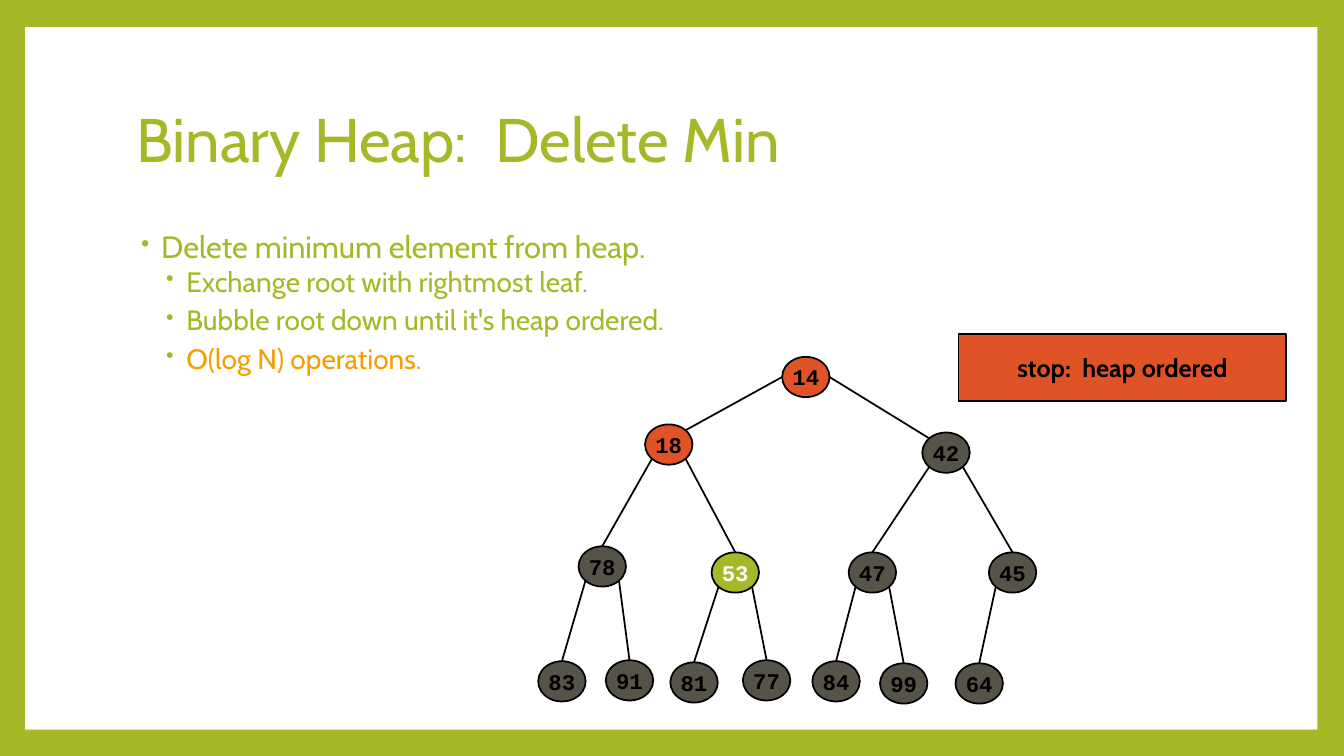
import math

import pptx
import pptx.dml.color
import pptx.enum.shapes
import pptx.enum.text
import pptx.oxml
import pptx.oxml.ns
import pptx.util

SLIDE_WIDTH = pptx.util.Inches(13.333)
SLIDE_HEIGHT = pptx.util.Inches(7.5)

GREEN, ORANGE, AMBER = "A6B727", "DF5327", "F59E00"
GREY, BLACK, WHITE = "565349", "000000", "FFFFFF"
SANS, MONO = "Cabin", "Courier New"

# All positions are percentages of the slide's width and height.
NODE_WIDTH, NODE_HEIGHT = 3.53, 5.33

# Heap in array order: the children of entry i are entries 2i + 1 and 2i + 2.
# Each entry is key, centre x, centre y.
HEAP = [
    (14, 59.96, 49.87),
    (18, 49.76, 58.8), (42, 70.39, 59.87),
    (78, 44.81, 74.93), (53, 54.71, 75.73),
    (47, 64.91, 75.73), (45, 75.34, 75.73),
    (83, 41.81, 90.13), (91, 46.84, 90), (81, 51.64, 90.27), (77, 57.04, 90),
    (84, 62.21, 90.13), (99, 67.24, 90.4), (64, 72.86, 90.4),
]
NODE_COLOURS = {14: (ORANGE, BLACK), 18: (ORANGE, BLACK), 53: (GREEN, WHITE)}

STEPS = [
    ("Delete minimum element from heap.", 0, GREEN),
    ("Exchange root with rightmost leaf.", 1, GREEN),
    ("Bubble root down until it's heap ordered.", 1, GREEN),
    ("O(log N) operations.", 1, AMBER),
]


def colour(hex_code):
    return pptx.dml.color.RGBColor.from_string(hex_code)


def across(percent):
    return round(SLIDE_WIDTH * percent / 100)


def down(percent):
    return round(SLIDE_HEIGHT * percent / 100)


def box(left, top, width, height):
    return across(left), down(top), across(width), down(height)


def format_runs(paragraph, font, size, hex_code, bold=False):
    for run in paragraph.runs:
        run.font.name = font
        run.font.size = pptx.util.Pt(size)
        run.font.bold = bold
        run.font.color.rgb = colour(hex_code)


def add_filled(slide, kind, area, fill, outline=None):
    shape = slide.shapes.add_shape(kind, *box(*area))
    shape.shadow.inherit = False
    shape.fill.solid()
    shape.fill.fore_color.rgb = colour(fill)
    if outline:
        shape.line.color.rgb = colour(outline)
        shape.line.width = pptx.util.Pt(1.25)
    else:
        shape.line.fill.background()
    return shape


def add_label(shape, text, font, size, hex_code):
    frame = shape.text_frame
    frame.text = text
    frame.word_wrap = False
    frame.vertical_anchor = pptx.enum.text.MSO_ANCHOR.MIDDLE
    frame.paragraphs[0].alignment = pptx.enum.text.PP_ALIGN.CENTER
    format_runs(frame.paragraphs[0], font, size, hex_code, bold=True)


def add_frame(slide):
    """Colour the slide's border and put the white panel behind the title."""
    slide.background.fill.solid()
    slide.background.fill.fore_color.rgb = colour(GREEN)
    panel = add_filled(slide, pptx.enum.shapes.MSO_SHAPE.RECTANGLE,
                       (1.88, 3.6, 96.15, 92.93), WHITE)
    slide.shapes.title.element.addprevious(panel.element)


def set_title(slide, text):
    title = slide.shapes.title
    title.left, title.top, title.width, title.height = box(9.38, 8.93, 81, 19.73)
    frame = title.text_frame
    frame.text = text
    frame.auto_size = pptx.enum.text.MSO_AUTO_SIZE.NONE
    frame.vertical_anchor = pptx.enum.text.MSO_ANCHOR.MIDDLE
    heading = frame.paragraphs[0]
    heading.alignment = pptx.enum.text.PP_ALIGN.LEFT
    heading.line_spacing = 0.9
    format_runs(heading, SANS, 44, GREEN)


def add_bullet(paragraph, level):
    properties = paragraph._p.get_or_add_pPr()
    properties.set("marL", str(pptx.util.Inches(0.25 * (level + 1))))
    properties.set("indent", str(pptx.util.Inches(-0.2)))
    namespace = pptx.oxml.ns.nsdecls("a")
    for bullet_part in (
        f'<a:buClr {namespace}><a:srgbClr val="{GREEN}"/></a:buClr>',
        f'<a:buSzPct {namespace} val="80000"/>',
        f'<a:buChar {namespace} char="•"/>',
    ):
        properties.append(pptx.oxml.parse_xml(bullet_part))


def add_steps(slide):
    frame = slide.shapes.add_textbox(*box(9.38, 30, 81, 58.93)).text_frame
    frame.word_wrap = True
    for index, (text, level, hex_code) in enumerate(STEPS):
        step = frame.add_paragraph() if index else frame.paragraphs[0]
        step.text = text
        step.level = level
        step.line_spacing = 0.9
        step.space_before = pptx.util.Pt(2 if level else 14)
        step.space_after = pptx.util.Pt(4 if level else 0)
        add_bullet(step, level)
        format_runs(step, SANS, 20 if level else 22, hex_code)


def rim_point(node, degrees):
    """Point on a node's outline, clockwise from the right."""
    _, x, y = node
    angle = math.radians(degrees)
    return (across(x + NODE_WIDTH / 2 * math.cos(angle)),
            down(y + NODE_HEIGHT / 2 * math.sin(angle)))


def add_edge(slide, parent_index, child_index):
    is_left = child_index % 2 == 1
    if parent_index == 0:
        leave, arrive = (180, -45) if is_left else (0, -135)
    else:
        leave, arrive = (135 if is_left else 45), -90
    edge = slide.shapes.add_connector(
        pptx.enum.shapes.MSO_CONNECTOR.STRAIGHT,
        *rim_point(HEAP[parent_index], leave),
        *rim_point(HEAP[child_index], arrive))
    edge.line.color.rgb = colour(BLACK)
    edge.line.width = pptx.util.Pt(1.25)
    edge.element.spPr.append(pptx.oxml.parse_xml(
        f'<a:effectLst {pptx.oxml.ns.nsdecls("a")}/>'))


def add_node(slide, key, x, y):
    fill, ink = NODE_COLOURS.get(key, (GREY, BLACK))
    area = (x - NODE_WIDTH / 2, y - NODE_HEIGHT / 2, NODE_WIDTH, NODE_HEIGHT)
    node = add_filled(slide, pptx.enum.shapes.MSO_SHAPE.OVAL, area, fill, BLACK)
    add_label(node, str(key), MONO, 16, ink)


def add_heap(slide):
    for child_index in range(1, len(HEAP)):
        add_edge(slide, (child_index - 1) // 2, child_index)
    for entry in HEAP:
        add_node(slide, *entry)


def add_verdict(slide, text):
    verdict = add_filled(slide, pptx.enum.shapes.MSO_SHAPE.RECTANGLE,
                         (71.33, 44.13, 24.38, 8.93), ORANGE, BLACK)
    add_label(verdict, text, SANS, 18, BLACK)


def main():
    deck = pptx.Presentation()
    deck.slide_width, deck.slide_height = SLIDE_WIDTH, SLIDE_HEIGHT
    slide = deck.slides.add_slide(deck.slide_layouts.get_by_name("Title Only"))
    add_frame(slide)
    set_title(slide, "Binary Heap:  Delete Min")
    add_steps(slide)
    add_heap(slide)
    add_verdict(slide, "stop:  heap ordered")
    deck.save("out.pptx")


if __name__ == "__main__":
    main()
